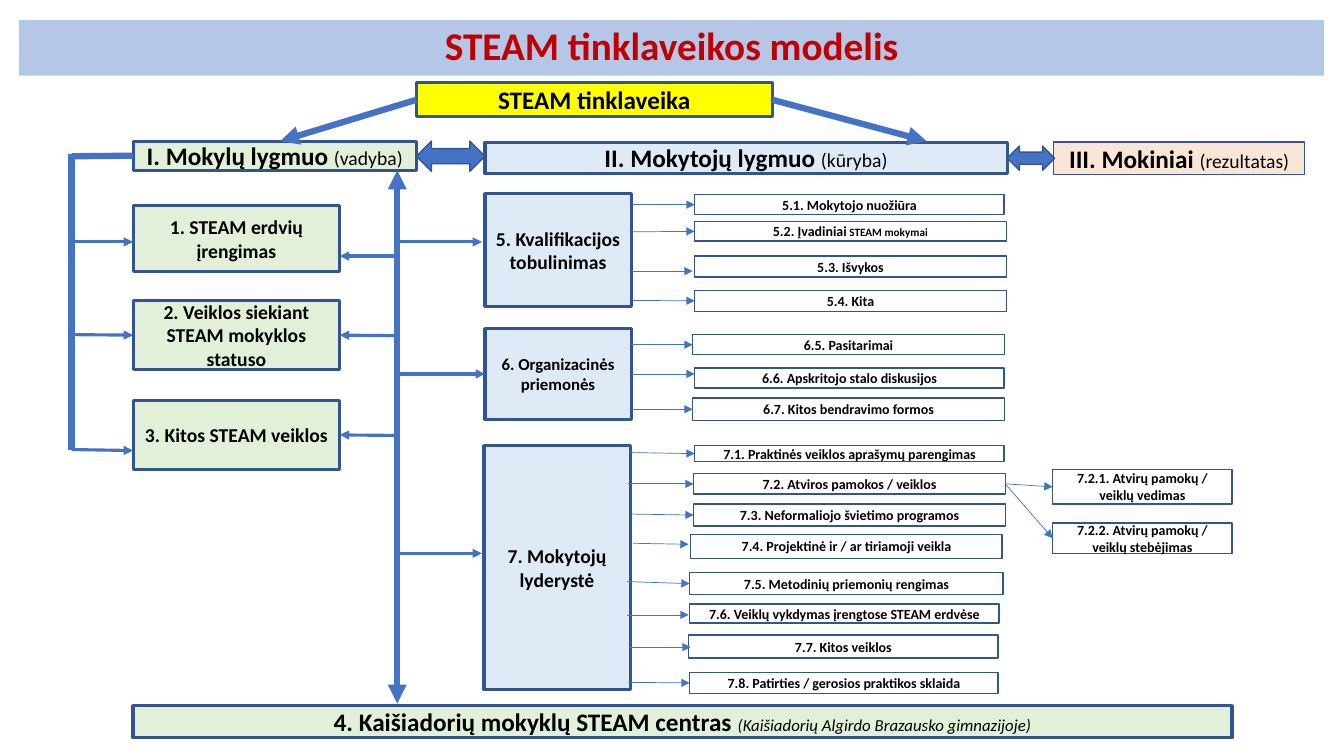
from pptx import Presentation
from pptx.dml.color import RGBColor
from pptx.enum.shapes import MSO_CONNECTOR, MSO_SHAPE
from pptx.enum.text import MSO_ANCHOR, PP_ALIGN
from pptx.oxml.ns import qn
from pptx.util import Pt
from lxml.etree import SubElement

PX = 9144  # EMU per px, 100 px to the inch
TITLE_RED = RGBColor(0xC0, 0x00, 0x00)
TITLE_BAND = RGBColor(0xB4, 0xC7, 0xE7)
YELLOW = RGBColor(0xFF, 0xFF, 0x00)
GREEN = RGBColor(0xE2, 0xF0, 0xD9)
PALE_BLUE = RGBColor(0xDE, 0xEB, 0xF7)
PEACH = RGBColor(0xFB, 0xE5, 0xD6)
ARROW_BLUE = RGBColor(0x44, 0x72, 0xC4)
BORDER = RGBColor(0x32, 0x54, 0x91)
BLACK = RGBColor(0x00, 0x00, 0x00)

deck = Presentation()
deck.slide_width, deck.slide_height = 1333 * PX, 750 * PX
page = deck.slides.add_slide(deck.slide_layouts[6])
side_middles = {}


def add_box(place, fill, border, runs=(), kind=MSO_SHAPE.RECTANGLE, color=BLACK):
    """Runs are (text, size, bold, italic); border is a width in points."""
    box = page.shapes.add_shape(kind, *(length * PX for length in place))
    box.shadow.inherit = False
    if fill is None:
        box.fill.background()
    else:
        box.fill.solid()
        box.fill.fore_color.rgb = fill
    if border:
        box.line.color.rgb = BORDER
        box.line.width = Pt(border)
    else:
        box.line.fill.background()
    frame = box.text_frame
    frame.word_wrap = True
    frame.vertical_anchor = MSO_ANCHOR.MIDDLE
    para = frame.paragraphs[0]
    para.alignment = PP_ALIGN.CENTER
    for text, size, bold, italic in runs:
        span = para.add_run()
        span.text = text
        look = {"name": "Calibri", "size": Pt(size), "bold": bold, "italic": italic}
        for name, value in look.items():
            setattr(span.font, name, value)
        span.font.color.rgb = color
    if kind == MSO_SHAPE.RECTANGLE:
        x, y, w, h = place
        middles = [(x + w / 2, y), (x, y + h / 2), (x + w / 2, y + h), (x + w, y + h / 2)]
        for site, middle in enumerate(middles):
            side_middles[middle] = (box, site)
    return box


def add_line(start, end, width, heads=("tailEnd",)):
    line = page.shapes.add_connector(
        MSO_CONNECTOR.STRAIGHT, *(length * PX for length in start + end))
    # Join each end that meets the middle of a box side
    for point, join in ((start, line.begin_connect), (end, line.end_connect)):
        for middle, (box, site) in side_middles.items():
            if max(abs(point[0] - middle[0]), abs(point[1] - middle[1])) <= 1:
                join(box, site)
                break
    line.line.color.rgb = ARROW_BLUE
    line.line.width = Pt(width)
    for head in heads:
        SubElement(line.line._get_or_add_ln(), qn("a:" + head), type="triangle")
    SubElement(line._element.spPr, qn("a:effectLst"))


# Title band
title = add_box((19, 20, 1294, 55), TITLE_BAND, 0,
                [("STEAM tinklaveikos modelis", 28, True, False)], color=TITLE_RED)
title.text_frame.paragraphs[0].line_spacing = 0.9

# Root, levels and the centre: place, fill, border, heading, note, note size, note italic
LEVELS = [
    ((413, 82, 353, 34), YELLOW, 2.25, "STEAM tinklaveika", "", 14, False),
    ((132, 140, 281, 29), GREEN, 2.25, "I. Mokylų lygmuo ", "(vadyba)", 14, False),
    ((481, 141, 518, 31), PALE_BLUE, 2.25, "II. Mokytojų lygmuo ", "(kūryba)", 14, False),
    ((1045, 141, 249, 32), PEACH, 1, "III. Mokiniai ", "(rezultatas)", 14, False),
    ((132, 700, 1090, 32), GREEN, 2.25, "4. Kaišiadorių mokyklų STEAM centras ",
     "(Kaišiadorių Algirdo Brazausko gimnazijoje)", 12, True),
]
for place, fill, border, heading, note, note_size, italic in LEVELS:
    runs = [(heading, 18, True, False)]
    if note:
        runs.append((note, note_size, False, italic))
    add_box(place, fill, border, runs)

# School activities and teacher groups
GROUPS = [
    ((132, 204, 205, 65), GREEN, "1. STEAM erdvių įrengimas", 14),
    ((132, 298, 205, 69), GREEN, "2. Veiklos siekiant STEAM mokyklos statuso", 14),
    ((132, 397, 205, 69), GREEN, "3. Kitos STEAM veiklos", 14),
    ((481, 192, 145, 112), PALE_BLUE, "5. Kvalifikacijos tobulinimas", 14),
    ((481, 326, 145, 90), PALE_BLUE, "6. Organizacinės priemonės", 12),
    ((480, 442, 145, 242), PALE_BLUE, "7. Mokytojų lyderystė", 14),
]
for place, fill, text, size in GROUPS:
    add_box(place, fill, 2.25, [(text, size, True, False)])

# Teacher activities: place, text, smaller ending
ACTIVITIES = [
    ((689, 193, 307, 20), "5.1. Mokytojo nuožiūra", ""),
    ((689, 220, 309, 19), "5.2. Įvadiniai", " STEAM mokymai"),
    ((689, 254, 309, 21), "5.3. Išvykos", ""),
    ((689, 288, 309, 21), "5.4. Kita", ""),
    ((687, 332, 309, 20), "6.5. Pasitarimai", ""),
    ((689, 365, 307, 20), "6.6. Apskritojo stalo diskusijos", ""),
    ((687, 395, 309, 22), "6.7. Kitos bendravimo formos", ""),
    ((689, 442, 307, 16), "7.1. Praktinės veiklos aprašymų parengimas", ""),
    ((688, 470, 309, 20), "7.2. Atviros pamokos / veiklos", ""),
    ((688, 500, 309, 22), "7.3. Neformaliojo švietimo programos", ""),
    ((685, 530, 309, 24), "7.4. Projektinė ir / ar tiriamoji veikla", ""),
    ((684, 568, 311, 22), "7.5. Metodinių priemonių rengimas", ""),
    ((684, 599, 307, 19), "7.6. Veiklų vykdymas įrengtose STEAM erdvėse", ""),
    ((683, 630, 307, 23), "7.7. Kitos veiklos", ""),
    ((684, 667, 306, 21), "7.8. Patirties / gerosios praktikos sklaida", ""),
    ((1044, 466, 178, 34), "7.2.1. Atvirų pamokų / veiklų vedimas", ""),
    ((1044, 519, 178, 30), "7.2.2. Atvirų pamokų / veiklų stebėjimas", ""),
]
for place, text, ending in ACTIVITIES:
    runs = [(text, 10, True, False)]
    if ending:
        runs.append((ending, 8, True, False))
    add_box(place, None, 1, runs)

# Two-way arrows between levels
for place in ((413, 140, 68, 30), (999, 145, 47, 24)):
    add_box(place, ARROW_BLUE, 1, kind=MSO_SHAPE.LEFT_RIGHT_ARROW)

# Thin arrows to the activities
THIN_ARROWS = [
    (626, 203, 689, 203), (626, 230, 689, 230), (626, 269, 687, 269), (626, 298, 689, 298),
    (626, 342, 687, 342), (626, 371, 689, 371), (626, 406, 687, 406),
    (625, 449, 689, 449), (623, 480, 689, 480), (627, 510, 688, 510), (628, 539, 683, 540),
    (622, 577, 684, 579), (622, 610, 683, 610), (624, 642, 685, 642), (623, 677, 684, 677),
    (997, 480, 1044, 483), (997, 480, 1044, 534),
]
for x1, y1, x2, y2 in THIN_ARROWS:
    add_line((x1, y1), (x2, y2), 0.5)

# Root arrows, left bracket and central spine
add_line((413, 99), (278, 140), 4.5)
add_line((766, 99), (919, 140), 4.5)
add_line((132, 155), (71, 155), 4.5, heads=())
add_line((71, 153), (71, 446), 4.5, heads=())
add_line((394, 169), (394, 698), 4.5, heads=("headEnd", "tailEnd"))

# Medium arrows from the bracket and the spine
BRACKET, SPINE = 71, 394
BRANCHES = [
    (BRACKET, 240, 132, 240), (BRACKET, 332, 132, 333), (BRACKET, 446, 132, 447),
    (SPINE, 240, 478, 240), (SPINE, 371, 481, 371), (SPINE, 549, 478, 549),
    (SPINE, 254, 337, 254), (SPINE, 333, 337, 333), (SPINE, 432, 337, 431),
]
for x1, y1, x2, y2 in BRANCHES:
    add_line((x1, y1), (x2, y2), 2.25)

deck.save("out.pptx")
